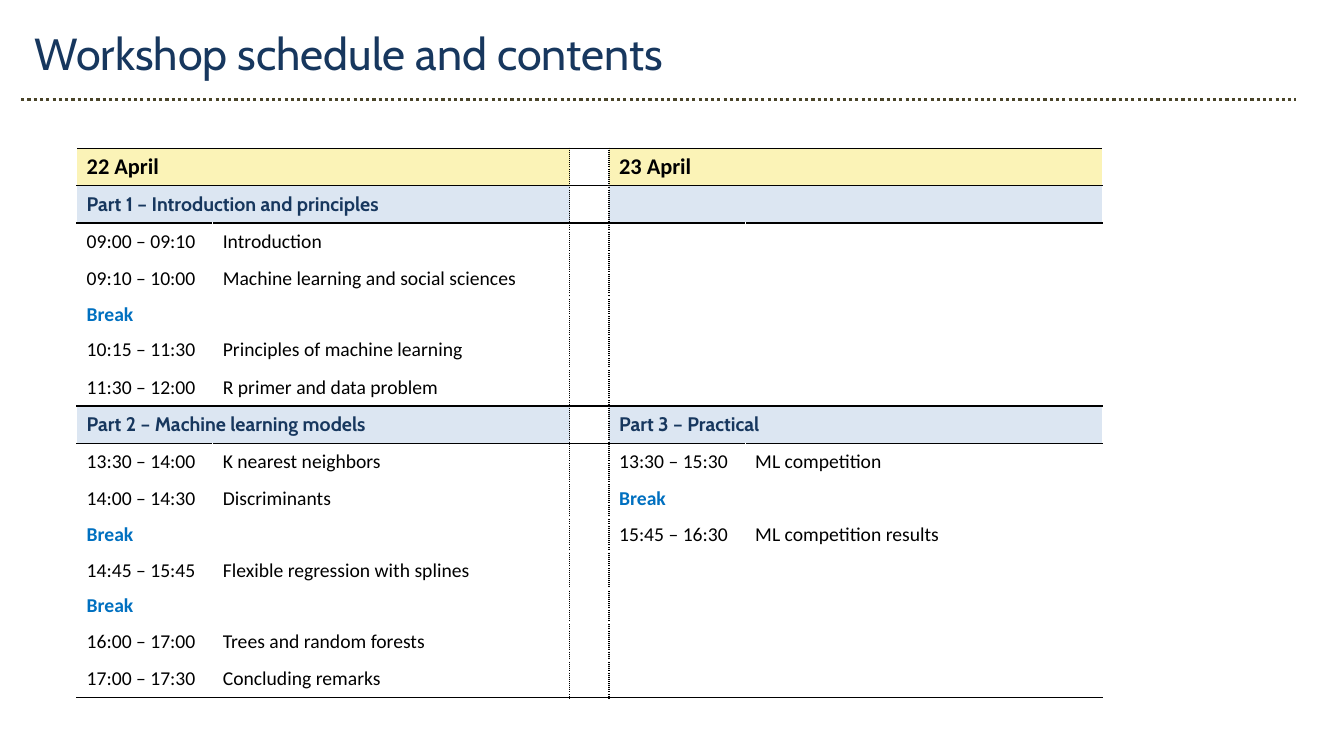
from lxml.etree import SubElement
from pptx import Presentation
from pptx.dml.color import RGBColor
from pptx.enum.dml import MSO_LINE
from pptx.enum.shapes import MSO_CONNECTOR
from pptx.enum.text import MSO_ANCHOR, PP_ALIGN
from pptx.oxml.ns import qn
from pptx.util import Inches, Pt

NAVY = RGBColor(0x17, 0x37, 0x5E)
BROWN = RGBColor(0x4A, 0x45, 0x2A)
BLACK = RGBColor(0x00, 0x00, 0x00)
BLUE = RGBColor(0x00, 0x70, 0xC0)
YELLOW = RGBColor(0xFB, 0xF3, 0xB7)
PALE_BLUE = RGBColor(0xDC, 0xE6, 0xF2)

SLIDE_W, SLIDE_H = Inches(13.33), Inches(7.5)

# Kinds of text: font, size, bold, colour
STYLES = {
    "day": ("Calibri", 16, True, BLACK),
    "part": ("Cabin", 14, True, NAVY),
    "session": ("Calibri", 14, False, BLACK),
    "break": ("Calibri", 14, True, BLUE),
}
BAND_FILLS = {"day": YELLOW, "part": PALE_BLUE}

# Kind of row, first day, second day; a session is a (time, topic) pair
SCHEDULE = [
    ("day", ("22 April",), ("23 April",)),
    ("part", ("Part 1 – Introduction and principles",), ()),
    ("session", ("09:00 – 09:10", "Introduction"), ()),
    ("session", ("09:10 – 10:00", "Machine learning and social sciences"), ()),
    ("break", ("Break",), ()),
    ("session", ("10:15 – 11:30", "Principles of machine learning"), ()),
    ("session", ("11:30 – 12:00", "R primer and data problem"), ()),
    ("part", ("Part 2 – Machine learning models",), ("Part 3 – Practical",)),
    ("session", ("13:30 – 14:00", "K nearest neighbors"),
     ("13:30 – 15:30", "ML competition")),
    ("session", ("14:00 – 14:30", "Discriminants"), ("Break",)),
    ("break", ("Break",), ("15:45 – 16:30", "ML competition results")),
    ("session", ("14:45 – 15:45", "Flexible regression with splines"), ()),
    ("break", ("Break",), ()),
    ("session", ("16:00 – 17:00", "Trees and random forests"), ()),
    ("session", ("17:00 – 17:30", "Concluding remarks"), ()),
]
DAY_COLS = (0, 3)
GAP_COL = 2
COL_SHARES = (10.13, 26.56, 2.93, 10.13, 26.56)
ROW_SHARE, BREAK_SHARE = 4.93, 4.13


def x(percent):
    return int(SLIDE_W * percent / 100)


def y(percent):
    return int(SLIDE_H * percent / 100)


def add_run(p, text, font, size, bold, color):
    r = p.add_run()
    r.text = text
    r.font.name, r.font.size, r.font.bold = font, Pt(size), bold
    r.font.color.rgb = color


def add_title(s, text):
    sp = s.shapes.title
    sp.left, sp.top, sp.width, sp.height = x(1.8), y(2.8), x(55.59), y(8.53)
    tf = sp.text_frame
    tf.word_wrap = False
    tf.vertical_anchor = MSO_ANCHOR.TOP
    p = tf.paragraphs[0]
    p.alignment = PP_ALIGN.LEFT
    add_run(p, text, "Cabin", 32, False, NAVY)


def add_rule(s):
    rule = s.shapes.add_connector(
        MSO_CONNECTOR.STRAIGHT, x(1.58), y(13.2), x(96.4), y(13.2))
    rule.line.color.rgb = BROWN
    rule.line.width = Pt(2.25)
    rule.line.dash_style = MSO_LINE.ROUND_DOT
    SubElement(rule._element.spPr, qn("a:effectLst"))


def add_border(cell, side, dash):
    ln = SubElement(cell._tc.get_or_add_tcPr(), qn(f"a:ln{side}"), w=str(Pt(1)))
    fill = SubElement(ln, qn("a:solidFill"))
    SubElement(fill, qn("a:srgbClr"), val=str(BLACK))
    SubElement(ln, qn("a:prstDash"), val=dash)


def is_band(row):
    return 0 <= row < len(SCHEDULE) and SCHEDULE[row][0] in BAND_FILLS


def format_cell(cell, row, col):
    # Dotted lines beside the gap, solid lines around bands and at the end
    last_col = col + (cell.span_width - 1 if cell.is_merge_origin else 0)
    if col in (GAP_COL, GAP_COL + 1):
        add_border(cell, "L", "dot")
    if last_col in (GAP_COL - 1, GAP_COL):
        add_border(cell, "R", "dot")
    if is_band(row) or is_band(row - 1):
        add_border(cell, "T", "solid")
    if is_band(row) or is_band(row + 1) or row == len(SCHEDULE) - 1:
        add_border(cell, "B", "solid")
    if is_band(row) and col != GAP_COL:
        cell.fill.solid()
        cell.fill.fore_color.rgb = BAND_FILLS[SCHEDULE[row][0]]
    else:
        cell.fill.background()
    cell.vertical_anchor = MSO_ANCHOR.MIDDLE


def fill_day(table, row, first_col, kind, texts):
    if not is_band(row):
        kind = "session" if len(texts) == 2 else "break"
    for col, text in enumerate(texts, first_col):
        p = table.cell(row, col).text_frame.paragraphs[0]
        add_run(p, text, *STYLES[kind])


def add_schedule(s):
    heights = [y(BREAK_SHARE if kind == "break" else ROW_SHARE)
               for kind, _, _ in SCHEDULE]
    widths = [x(share) for share in COL_SHARES]
    table = s.shapes.add_table(len(heights), len(widths), x(5.7), y(19.6),
                               sum(widths), sum(heights)).table
    table.first_row = table.horz_banding = False
    for column, width in zip(table.columns, widths):
        column.width = width
    for row, (kind, *days) in enumerate(SCHEDULE):
        table.rows[row].height = heights[row]
        for first_col, texts in zip(DAY_COLS, days):
            if is_band(row):
                table.cell(row, first_col).merge(table.cell(row, first_col + 1))
            fill_day(table, row, first_col, kind, texts)
        for col in range(len(widths)):
            cell = table.cell(row, col)
            format_cell(cell, row, col)
            # Empty cells keep the text size, so that rows stay low
            p = cell.text_frame.paragraphs[0]
            if not p.runs:
                SubElement(p._p, qn("a:endParaRPr"), sz="1400")


def main():
    prs = Presentation()
    prs.slide_width, prs.slide_height = SLIDE_W, SLIDE_H
    s = prs.slides.add_slide(prs.slide_layouts[5])
    add_title(s, "Workshop schedule and contents")
    add_rule(s)
    add_schedule(s)
    prs.save("out.pptx")


if __name__ == "__main__":
    main()
